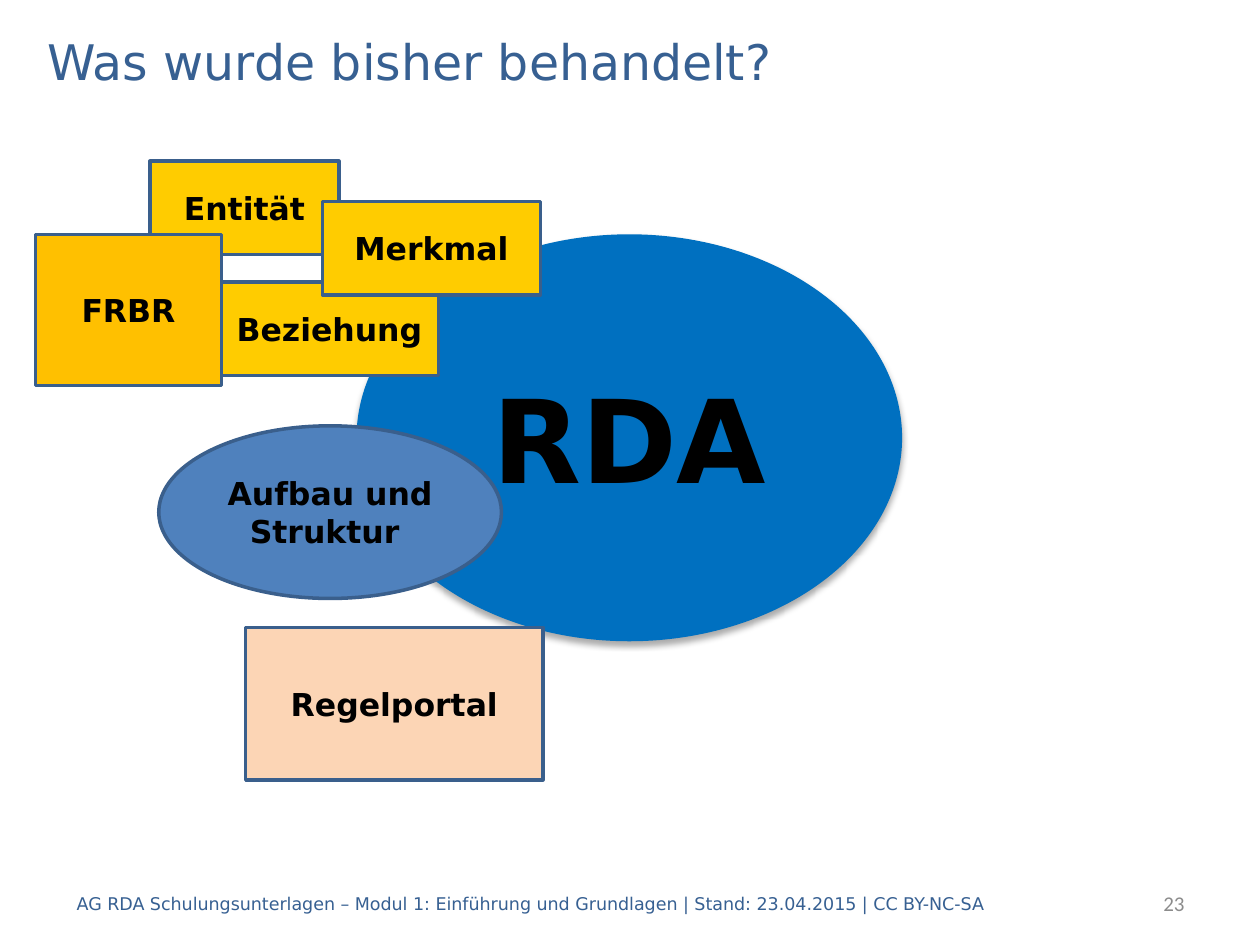
from lxml import etree
from pptx import Presentation
from pptx import util as u
from pptx.dml.color import RGBColor
from pptx.enum import shapes, text
from pptx.oxml import ns

COLORS = {
    "heading": "376092",
    "number": "8C8C8C",
    "label": "000000",
    "outline": "3A5F8C",
    "core": "0070C0",
    "structure": "4F81BD",
    "concept": "FFCC00",
    "model": "FFC000",
    "portal": "FCD5B5",
}
RECT = shapes.MSO_SHAPE.RECTANGLE
OVAL = shapes.MSO_SHAPE.OVAL
LEFT, CENTER, RIGHT = text.PP_ALIGN.LEFT, text.PP_ALIGN.CENTER, text.PP_ALIGN.RIGHT


def rgb(key):
    return RGBColor.from_string(COLORS[key])


def inches(box):
    return [u.Inches(length) for length in box]


def write(holder, wording, size=18, color="label", bold=False,
          font="DejaVu Sans", align=CENTER):
    frame = holder.text_frame
    frame.word_wrap = True
    frame.vertical_anchor = text.MSO_ANCHOR.MIDDLE
    paragraph = frame.paragraphs[0]
    paragraph.alignment = align
    run = paragraph.add_run()
    run.text = wording
    run.font.size = u.Pt(size)
    run.font.name = font
    run.font.bold = bold
    run.font.color.rgb = rgb(color)


def add_caption(slide, box, wording, **style):
    write(slide.shapes.add_textbox(*inches(box)), wording, **style)


def add_topic(slide, box, wording, fill, form=RECT, size=18, outlined=True):
    topic = slide.shapes.add_shape(form, *inches(box))
    topic.shadow.inherit = False
    topic.fill.solid()
    topic.fill.fore_color.rgb = rgb(fill)
    if outlined:
        topic.line.color.rgb = rgb("outline")
        topic.line.width = u.Pt(2)
    else:
        topic.line.fill.background()
    write(topic, wording, size=size, bold=True)
    return topic


def cast_shadow(topic):
    effects = topic.element.spPr.find(ns.qn("a:effectLst"))
    shadow = etree.SubElement(
        effects, ns.qn("a:outerShdw"), blurRad=str(u.Pt(3.5)),
        dist=str(u.Pt(2.2)), dir="5400000", rotWithShape="0")
    tint = etree.SubElement(shadow, ns.qn("a:srgbClr"), val=COLORS["label"])
    etree.SubElement(tint, ns.qn("a:alpha"), val="32000")


def add_header(slide, box):
    add_caption(slide, box, "Was wurde bisher behandelt?",
                size=28, color="heading", align=LEFT)


def add_footer(slide, box):
    left, top, width, height = box
    number_width = 1.59
    add_caption(slide, (left + width - number_width, top, number_width, height),
                "23", size=12, color="number", font="Calibri", align=RIGHT)
    add_caption(slide, (left, top, 7.72, height),
                "AG RDA Schulungsunterlagen – Modul 1: Einführung und Grundlagen"
                " | Stand: 23.04.2015 | CC BY-NC-SA",
                size=10, color="heading", align=LEFT)


def add_topic_map(slide, box):
    left, top = box[:2]

    def place(x, y, width, height):
        return left + x, top + y, width, height

    core = add_topic(slide, place(2.55, 0.58, 4.33, 3.23), "RDA", "core",
                     form=OVAL, size=66, outlined=False)
    cast_shadow(core)
    add_topic(slide, place(0.98, 2.1, 2.72, 1.37), "Aufbau und Struktur ",
              "structure", form=OVAL)
    for wording, x, y, width in (("Entität", 0.91, 0, 1.5),
                                 ("Beziehung", 1.47, 0.96, 1.73),
                                 ("Merkmal", 2.28, 0.32, 1.73)):
        add_topic(slide, place(x, y, width, 0.74), wording, "concept")
    add_topic(slide, place(1.67, 3.7, 2.36, 1.21), "Regelportal", "portal")
    add_topic(slide, place(0, 0.58, 1.48, 1.2), "FRBR", "model")


def main():
    deck = Presentation()
    deck.slide_width, deck.slide_height = u.Inches(10), u.Inches(7.5)
    slide = deck.slides.add_slide(deck.slide_layouts[6])
    add_header(slide, (0.28, 0.2, 9.45, 0.56))
    add_footer(slide, (0.51, 6.97, 8.99, 0.4))
    add_topic_map(slide, (0.28, 1.28, 6.88, 4.91))
    deck.save("out.pptx")


if __name__ == "__main__":
    main()
